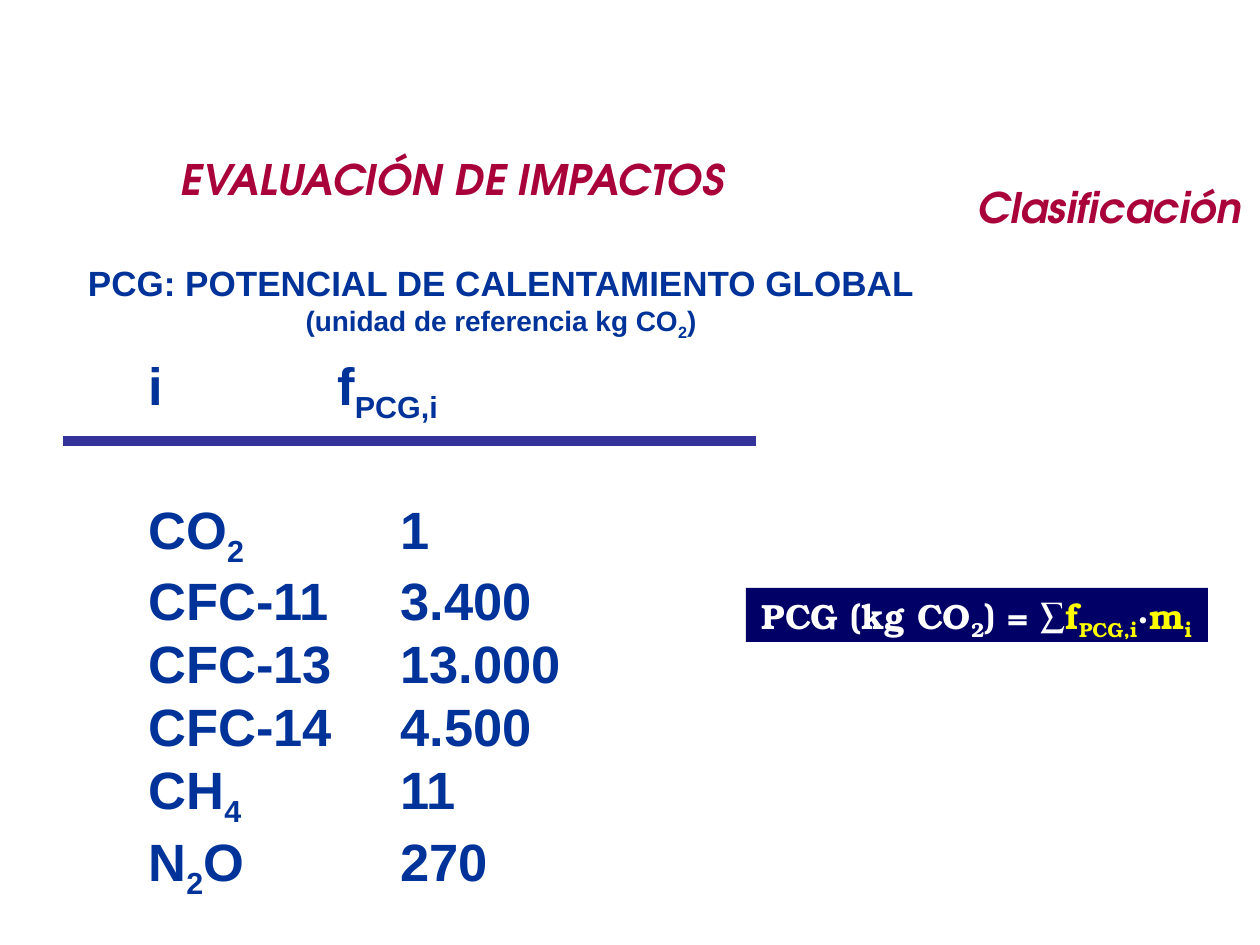
from pptx import Presentation
from pptx import util as u
from pptx.dml.color import RGBColor
from pptx.enum import shapes, text
from pptx.oxml.ns import qn

CRIMSON = RGBColor(0xA9, 0x01, 0x39)
BLUE = RGBColor(0x00, 0x33, 0x99)
RULE_BLUE = RGBColor(0x33, 0x33, 0x99)
NAVY = RGBColor(0x00, 0x00, 0x66)
WHITE = RGBColor(0xFF, 0xFF, 0xFF)
YELLOW = RGBColor(0xFF, 0xFF, 0x00)

HEADING_FONT = "TeX Gyre Adventor"
BODY_FONT = "Arial"
FORMULA_FONT = "TeX Gyre Bonum"
SUBSCRIPT = "-25000"


def px(length):
    return u.Emu(round(length * 914400 / 126))


class SlideBuilder:
    def __init__(self, presentation):
        self.slide = presentation.slides.add_slide(presentation.slide_layouts[6])

    def prepare(self, shape, wrap):
        frame = shape.text_frame
        frame.word_wrap = wrap
        frame.auto_size = text.MSO_AUTO_SIZE.SHAPE_TO_FIT_TEXT
        frame.vertical_anchor = text.MSO_ANCHOR.TOP
        return frame

    def text_box(self, left, top, width, height, wrap=False):
        box = self.slide.shapes.add_textbox(px(left), px(top), px(width), px(height))
        return self.prepare(box, wrap)

    def panel(self, left, top, width, height, fill):
        shape = self.slide.shapes.add_shape(
            shapes.MSO_SHAPE.RECTANGLE, px(left), px(top), px(width), px(height))
        shape.shadow.inherit = False
        shape.fill.solid()
        shape.fill.fore_color.rgb = fill
        shape.line.fill.background()
        return self.prepare(shape, False)

    def paragraph(self, frame, align=text.PP_ALIGN.LEFT, before=0):
        first = frame.paragraphs[0]
        paragraph = frame.add_paragraph() if first.runs else first
        paragraph.alignment = align
        if before:
            paragraph.space_before = u.Pt(before)
        return paragraph

    def run(self, paragraph, words, font, size, color, subscript=False, italic=False):
        run = paragraph.add_run()
        run.text = words
        run.font.name = font
        run.font.size = u.Pt(size)
        run.font.bold = True
        run.font.italic = italic
        run.font.color.rgb = color
        if subscript:
            run.font._element.set("baseline", SUBSCRIPT)

    def heading(self, words, left, top, width, wrap):
        frame = self.text_box(left, top, width, 63, wrap)
        self.run(self.paragraph(frame), words, HEADING_FONT, 24, CRIMSON, italic=True)

    def rule(self, left, right, y, color, weight):
        line = self.slide.shapes.add_connector(
            shapes.MSO_CONNECTOR.STRAIGHT, px(left), px(y), px(right), px(y))
        line.line.color.rgb = color
        line.line.width = u.Pt(weight)
        properties = line._element.spPr
        properties.append(properties.makeelement(qn("a:effectLst"), {}))


def main():
    presentation = Presentation()
    presentation.slide_width = px(1260)
    presentation.slide_height = px(945)
    builder = SlideBuilder(presentation)

    builder.heading("EVALUACIÓN DE IMPACTOS", 168, 147, 819, True)
    builder.heading("Clasificación", 965, 175, 290, False)

    subtitle = builder.text_box(74, 255, 854, 88)
    subtitle_lines = [
        (20, [("PCG: POTENCIAL DE CALENTAMIENTO GLOBAL", False)]),
        (16, [("(unidad de referencia kg CO", False), ("2", True), (")", False)]),
    ]
    for size, pieces in subtitle_lines:
        paragraph = builder.paragraph(subtitle, text.PP_ALIGN.CENTER)
        for words, subscript in pieces:
            builder.run(paragraph, words, BODY_FONT, size, BLUE, subscript)

    factors = builder.text_box(136, 347, 563, 495)
    factor_rows = [
        (0, [("i\t\t\tf", False), ("PCG,i", True)]),
        (41, [("CO", False), ("2", True), ("\t\t\t1", False)]),
        (0, [("CFC-11\t\t3.400", False)]),
        (0, [("CFC-13\t\t13.000", False)]),
        (0, [("CFC-14\t\t4.500", False)]),
        (0, [("CH", False), ("4", True), ("\t\t\t11", False)]),
        (0, [("N", False), ("2", True), ("O\t\t\t270", False)]),
    ]
    for before, pieces in factor_rows:
        paragraph = builder.paragraph(factors, before=before)
        for words, subscript in pieces:
            builder.run(paragraph, words, BODY_FONT, 30, BLUE, subscript)

    builder.rule(63, 756, 441, RULE_BLUE, 6)

    formula = builder.panel(746, 588, 462, 54, NAVY)
    formula_pieces = [
        ("PCG (kg CO", WHITE, False),
        ("2", WHITE, True),
        (") = ∑", WHITE, False),
        ("f", YELLOW, False),
        ("PCG,i", YELLOW, True),
        ("·", WHITE, False),
        ("m", YELLOW, False),
        ("i", YELLOW, True),
    ]
    paragraph = builder.paragraph(formula, text.PP_ALIGN.CENTER)
    for words, color, subscript in formula_pieces:
        builder.run(paragraph, words, FORMULA_FONT, 20, color, subscript)

    presentation.save("out.pptx")


if __name__ == "__main__":
    main()
